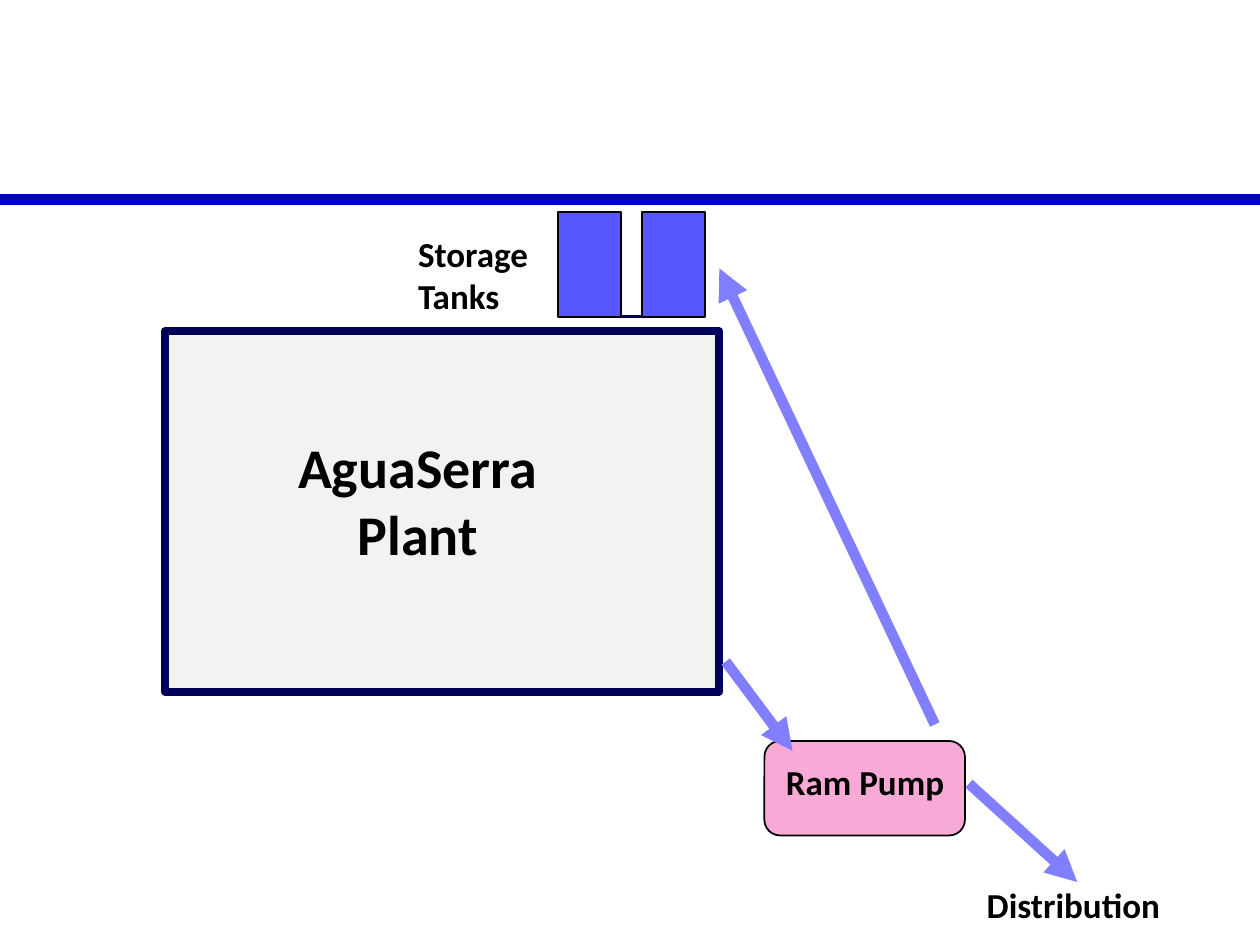
"""Build the water plant and ram pump flow diagram."""
from dataclasses import dataclass

from lxml import etree
from pptx import Presentation
from pptx.dml.color import RGBColor
from pptx.enum import shapes, text
from pptx.oxml import ns
from pptx.util import Pt


@dataclass(frozen=True)
class Theme:
    font: str = "Calibri"
    black: str = "000000"
    rule: str = "0300BE"
    navy: str = "00005A"
    plant: str = "F2F2F2"
    pump: str = "F8AAD7"
    tank: str = "5757FF"
    flow: str = "817FFF"
    large: int = 32
    label: int = 20


def add_label(words, left, top, width, height, size, align=text.PP_ALIGN.LEFT):
    box = page.shapes.add_textbox(Pt(left), Pt(top), Pt(width), Pt(height))
    box.text_frame.word_wrap = True
    para = box.text_frame.paragraphs[0]
    para.alignment = align
    span = para.add_run()
    span.text = words
    span.font.name = theme.font
    span.font.size = Pt(size)
    span.font.bold = True
    span.font.color.rgb = RGBColor.from_string(theme.black)


def add_line(start, end, color, width, arrow=False):
    line = page.shapes.add_connector(
        shapes.MSO_CONNECTOR.STRAIGHT, *map(Pt, start + end))
    line.line.color.rgb = RGBColor.from_string(color)
    line.line.width = Pt(width)
    if arrow:
        etree.SubElement(line.line._get_or_add_ln(), ns.qn("a:tailEnd"), type="triangle")
    etree.SubElement(line._element.spPr, ns.qn("a:effectLst"))


theme = Theme()
deck = Presentation()
deck.slide_width, deck.slide_height = Pt(720), Pt(540)
page = deck.slides.add_slide(deck.slide_layouts[6])

add_line((0, 113.9), (720, 113.9), theme.rule, 6)

rectangle = shapes.MSO_SHAPE.RECTANGLE
rounded = shapes.MSO_SHAPE.ROUNDED_RECTANGLE
tank_top, tank_width, tank_height = 121, 36, 60
tank_lefts = (318.8, 366.8)
blocks = [
    (rectangle, 94.3, 189.2, 316.8, 206, theme.plant, theme.navy, 4.5),
    (rounded, 436.8, 423.4, 114.6, 54, theme.pump, theme.black, 1),
]
blocks += [(rectangle, left, tank_top, tank_width, tank_height, theme.tank, theme.black, 1)
           for left in tank_lefts]
for kind, left, top, width, height, fill, outline, weight in blocks:
    block = page.shapes.add_shape(kind, Pt(left), Pt(top), Pt(width), Pt(height))
    block.shadow.inherit = False
    block.fill.solid()
    block.fill.fore_color.rgb = RGBColor.from_string(fill)
    block.line.color.rgb = RGBColor.from_string(outline)
    block.line.width = Pt(weight)

tank_bottom = tank_top + tank_height
add_line((tank_lefts[0] + tank_width, tank_bottom), (tank_lefts[1], tank_bottom),
         theme.navy, 1.5)
for start, end in [
    ((414.7, 378), (452.9, 429.1)),
    ((534.2, 414), (411.1, 153.4)),
    ((553.7, 447.8), (615.6, 504)),
]:
    add_line(start, end, theme.flow, 6, arrow=True)

add_label("AguaSerra Plant", 139, 243.4, 199.4, 85, theme.large, text.PP_ALIGN.CENTER)
add_label("Storage Tanks", 231.8, 129.6, 108.7, 55.4, theme.label)
add_label("Ram Pump", 442, 431.3, 126, 31.7, theme.label)
add_label("Distribution ", 545.8, 501.1, 139.7, 55.4, theme.label, text.PP_ALIGN.CENTER)

deck.save("out.pptx")
